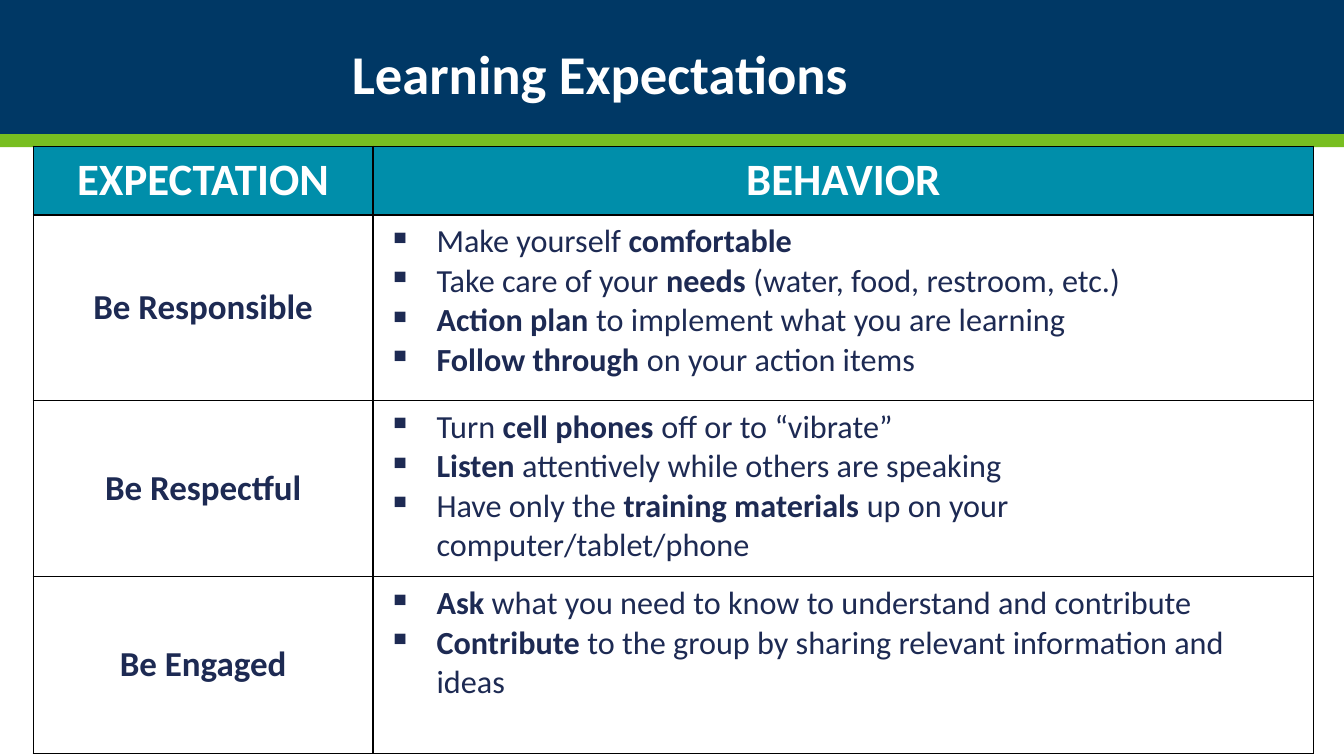
from dataclasses import dataclass

from lxml.etree import SubElement
from pptx import Presentation
from pptx.dml.color import RGBColor
from pptx.enum.shapes import MSO_SHAPE
from pptx.enum.text import MSO_ANCHOR, MSO_AUTO_SIZE, PP_ALIGN
from pptx.oxml.ns import qn
from pptx.util import Inches, Pt

COLORS = {
    "navy": "003865",
    "green": "78BE21",
    "teal": "008EAA",
    "ink": "1D2A53",
    "white": "FFFFFF",
    "black": "000000",
}
FONT = "Calibri"
PAGE_WIDTH, PAGE_HEIGHT = 13.33, 7.5
COLUMN_WIDTHS = (3.37, 9.33)
ROW_HEIGHTS = (0.6, 1.84, 1.75, 1.75)
HEADINGS = ("EXPECTATION", "BEHAVIOR")


@dataclass(frozen=True)
class Band:
    top: float
    height: float
    color: str


@dataclass(frozen=True)
class Expectation:
    """A table row; asterisks enclose the bold words of a behavior."""
    name: str
    behaviors: tuple[str, ...]


BANDS = (Band(0, 1.33, "navy"), Band(1.33, 0.13, "green"))
EXPECTATIONS = (
    Expectation("Be Responsible", (
        "Make yourself *comfortable*",
        "Take care of your *needs* (water, food, restroom, etc.)",
        "*Action plan *to implement what you are learning",
        "*Follow through *on your action items",
    )),
    Expectation("Be Respectful", (
        "Turn *cell phones* off or to “vibrate”",
        "*Listen *attentively while others are speaking",
        "Have only the *training materials *up on your computer/tablet/phone",
    )),
    Expectation("Be Engaged", (
        "*Ask* what you need to know to understand and contribute",
        "*Contribute *to the group by sharing relevant information and ideas",
    )),
)


def rgb(name: str) -> RGBColor:
    return RGBColor.from_string(COLORS[name])


def add_span(para, text: str, *, size: float, color: str, bold: bool = True) -> None:
    span = para.add_run()
    span.text = text
    span.font.name = FONT
    span.font.size = Pt(size)
    span.font.bold = bold
    span.font.color.rgb = rgb(color)


def add_band(page, band: Band) -> None:
    box = page.shapes.add_shape(MSO_SHAPE.RECTANGLE, 0, Inches(band.top),
                                Inches(PAGE_WIDTH), Inches(band.height))
    box.shadow.inherit = False
    box.fill.solid()
    box.fill.fore_color.rgb = rgb(band.color)
    box.line.fill.background()


def place_title(page, text: str) -> None:
    title = page.shapes.title
    title.left, title.top = Inches(3.39), Inches(0.38)
    title.width, title.height = Inches(9.18), Inches(0.68)
    title.element.getparent().append(title.element)  # in front of the bands
    frame = title.text_frame
    frame.auto_size = MSO_AUTO_SIZE.NONE
    frame.vertical_anchor = MSO_ANCHOR.MIDDLE
    para = frame.paragraphs[0]
    para.alignment = PP_ALIGN.LEFT
    add_span(para, text, size=39, color="white")


def format_cell(cell, fill: str, anchor: MSO_ANCHOR) -> None:
    cell.margin_left = cell.margin_right = Inches(0.13)
    cell.margin_top = cell.margin_bottom = Inches(0.07)
    cell.vertical_anchor = anchor
    properties = cell._tc.get_or_add_tcPr()
    for side in ("a:lnL", "a:lnR", "a:lnT", "a:lnB"):
        line = SubElement(properties, qn(side), w=str(Pt(1)))
        solid = SubElement(line, qn("a:solidFill"))
        SubElement(solid, qn("a:srgbClr"), val=COLORS["black"])
    cell.fill.solid()
    cell.fill.fore_color.rgb = rgb(fill)


def fill_label(cell, text: str, *, size: float, color: str, fill: str,
               anchor: MSO_ANCHOR) -> None:
    format_cell(cell, fill, anchor)
    para = cell.text_frame.paragraphs[0]
    para.alignment = PP_ALIGN.CENTER
    add_span(para, text, size=size, color=color)


def add_bullet(para) -> None:
    properties = para._p.get_or_add_pPr()
    properties.set("marL", str(Inches(0.5)))
    properties.set("indent", str(Inches(-0.48)))
    tint = SubElement(properties, qn("a:buClr"))
    SubElement(tint, qn("a:srgbClr"), val=COLORS["ink"])
    SubElement(properties, qn("a:buChar"), char="▪")


def fill_behaviors(cell, behaviors: tuple[str, ...]) -> None:
    format_cell(cell, "white", MSO_ANCHOR.TOP)
    frame = cell.text_frame
    for index, behavior in enumerate(behaviors):
        para = frame.add_paragraph() if index else frame.paragraphs[0]
        add_bullet(para)
        for part, text in enumerate(behavior.split("*")):
            if text:
                add_span(para, text, size=23, color="ink", bold=part % 2 == 1)


def add_expectation_table(page) -> None:
    table = page.shapes.add_table(
        len(ROW_HEIGHTS), len(COLUMN_WIDTHS), Inches(0.33), Inches(1.45),
        Inches(sum(COLUMN_WIDTHS)), Inches(sum(ROW_HEIGHTS))).table
    table.horz_banding = False
    for column, width in zip(table.columns, COLUMN_WIDTHS):
        column.width = Inches(width)
    for row, height in zip(table.rows, ROW_HEIGHTS):
        row.height = Inches(height)
    for column, heading in enumerate(HEADINGS):
        fill_label(table.cell(0, column), heading, size=32, color="white",
                   fill="teal", anchor=MSO_ANCHOR.TOP)
    for row, expectation in enumerate(EXPECTATIONS, start=1):
        fill_label(table.cell(row, 0), expectation.name, size=25, color="ink",
                   fill="white", anchor=MSO_ANCHOR.MIDDLE)
        fill_behaviors(table.cell(row, 1), expectation.behaviors)


def main() -> None:
    deck = Presentation()
    deck.slide_width, deck.slide_height = Inches(PAGE_WIDTH), Inches(PAGE_HEIGHT)
    page = deck.slides.add_slide(deck.slide_layouts.get_by_name("Title Only"))
    for band in BANDS:
        add_band(page, band)
    place_title(page, "Learning Expectations")
    add_expectation_table(page)
    deck.save("out.pptx")


if __name__ == "__main__":
    main()
